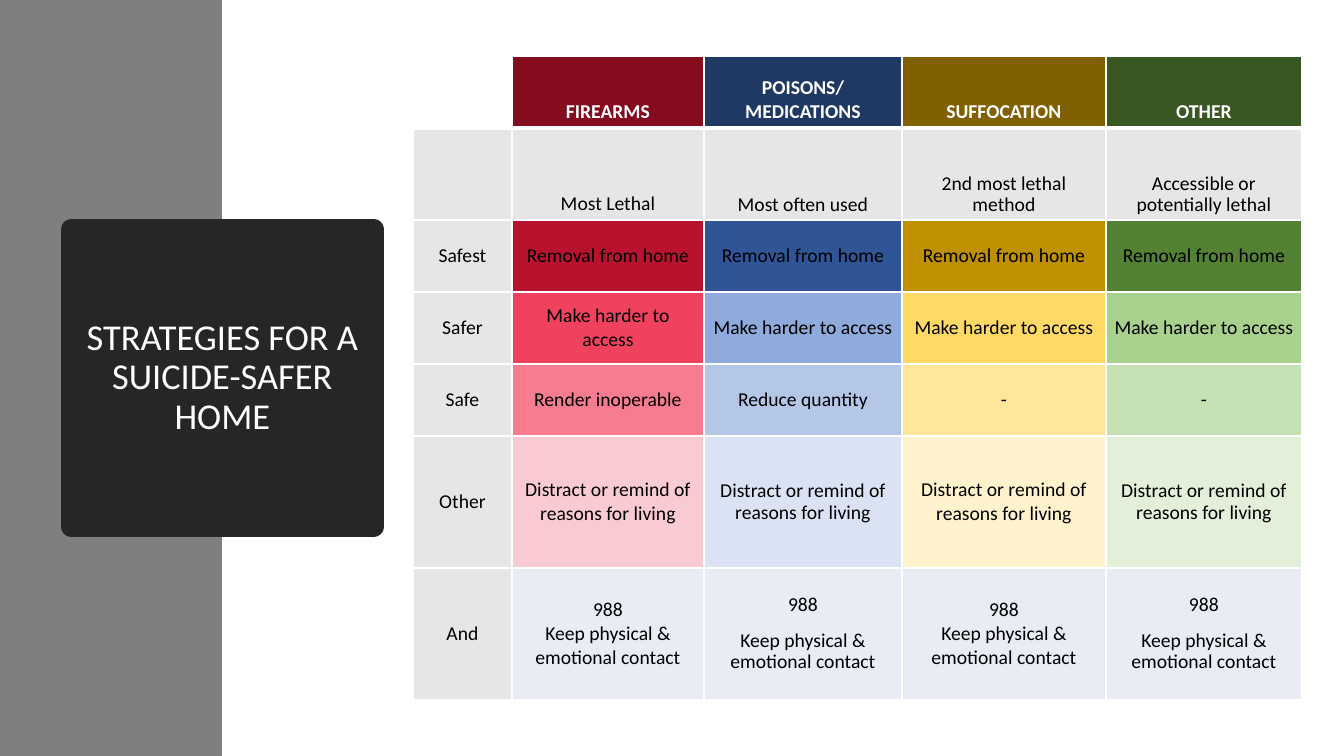
"""Build the slide on strategies for a suicide-safer home."""
from lxml import etree
from pptx import Presentation, util as u
from pptx.dml.color import RGBColor
from pptx.enum import shapes, text
from pptx.oxml import ns

PX = 9071.43
FONT = "Calibri"
C = {
    "band": "7F7F7F", "title": "262626", "white": "FFFFFF", "black": "000000",
    "label": "E7E6E6", "contact": "E9EBF5",
}
METHOD_COLORS = {
    "firearms": ["850B1F", C["label"], "B8122E", "F0415E", "F77C90", "FACAD2", C["contact"]],
    "poisons": ["203864", C["label"], "2F5597", "8FAADC", "B4C7E7", "DAE3F3", C["contact"]],
    "suffocation": ["806000", C["label"], "BF9000", "FFD966", "FFE699", "FFF2CC", C["contact"]],
    "other": ["385723", C["label"], "548235", "A9D18E", "C5E0B4", "E2F0D9", C["contact"]],
}
REMOVE, HARDER = "Removal from home", "Make harder to access"
DISTRACT = "Distract or remind of reasons for living"
CONTACT = "988\nKeep physical & emotional contact"
ROWS = [
    ["", "FIREARMS", "POISONS/ MEDICATIONS", "SUFFOCATION", "OTHER"],
    ["", "Most Lethal", "Most often used", "2nd most lethal method",
     "Accessible or potentially lethal"],
    ["Safest"] + [REMOVE] * 4,
    ["Safer"] + [HARDER] * 4,
    ["Safe", "Render inoperable", "Reduce quantity", "-", "-"],
    ["Other", DISTRACT, DISTRACT, "Distract or remind of reasons for living", DISTRACT],
    ["And"] + [CONTACT] * 4,
]
COL_WIDTHS = [99, 192, 198, 204, 196]
ROW_HEIGHTS = [72, 92, 72, 72, 72, 132, 132]


def px(n):
    return u.Emu(round(n * PX))


def write(tf, words, size=14, color="black", bold=False, spacing=1.0, gap=0):
    for i, line in enumerate(words.split("\n")):
        p = tf.add_paragraph() if i else tf.paragraphs[0]
        p.alignment = text.PP_ALIGN.CENTER
        p.line_spacing = spacing
        p.space_before = u.Pt(gap if i else 0)
        r = p.add_run()
        r.text = line
        r.font.name, r.font.size, r.font.bold = FONT, u.Pt(size), bold
        r.font.color.rgb = RGBColor.from_string(C[color])


prs = Presentation()
prs.slide_width, prs.slide_height = px(1344), px(756)
s = prs.slides.add_slide(prs.slide_layouts[6])

band = s.shapes.add_shape(shapes.MSO_SHAPE.RECTANGLE, 0, 0, px(222), px(756))
title = s.shapes.add_shape(shapes.MSO_SHAPE.RECTANGLE, px(71), px(229), px(303), px(298))
for sp, name in ((band, "band"), (title, "title")):
    sp.shadow.inherit = False
    sp.fill.solid()
    sp.fill.fore_color.rgb = RGBColor.from_string(C[name])
band.line.fill.background()
title.line.color.rgb = RGBColor.from_string(C["title"])
title.line.width = u.Pt(13.75)
etree.SubElement(title.line._get_or_add_ln(), ns.qn("a:round"))
tf = title.text_frame
tf.word_wrap = True
tf.vertical_anchor = text.MSO_ANCHOR.MIDDLE
write(tf, "STRATEGIES FOR A SUICIDE-SAFER HOME", size=26, color="white", spacing=0.9)

table = s.shapes.add_table(7, 5, px(413), px(56), px(sum(COL_WIDTHS)), px(sum(ROW_HEIGHTS))).table
table.horz_banding = False
for col, width in zip(table.columns, COL_WIDTHS):
    col.width = px(width)
for row, height in zip(table.rows, ROW_HEIGHTS):
    row.height = px(height)

fills = [[None] + [C["label"]] * 6, *METHOD_COLORS.values()]
for i, row in enumerate(ROWS):
    for j, words in enumerate(row):
        cell = table.cell(i, j)
        cell.margin_left = cell.margin_right = px(7)
        cell.margin_top = cell.margin_bottom = px(4)
        cell.vertical_anchor = text.MSO_ANCHOR.BOTTOM if i < 2 else text.MSO_ANCHOR.MIDDLE
        tcPr = cell._tc.get_or_add_tcPr()
        for side in "LRTB":
            heavy = (i, side) in ((0, "B"), (1, "T"))
            ln = etree.SubElement(tcPr, ns.qn(f"a:ln{side}"), w=str(u.Pt(3 if heavy else 1)))
            fill = etree.SubElement(ln, ns.qn("a:solidFill"))
            etree.SubElement(fill, ns.qn("a:srgbClr"), val=C["white"])
        if fills[j][i]:
            cell.fill.solid()
            cell.fill.fore_color.rgb = RGBColor.from_string(fills[j][i])
        else:
            cell.fill.background()
        if words:
            tight = i > 0 and (j in (2, 4) or j == 3 and i < 5)
            write(cell.text_frame, words, color="black" if i else "white", bold=i == 0,
                  spacing=0.9 if tight else 1.0, gap=10 if tight else 0)

prs.save("out.pptx")
